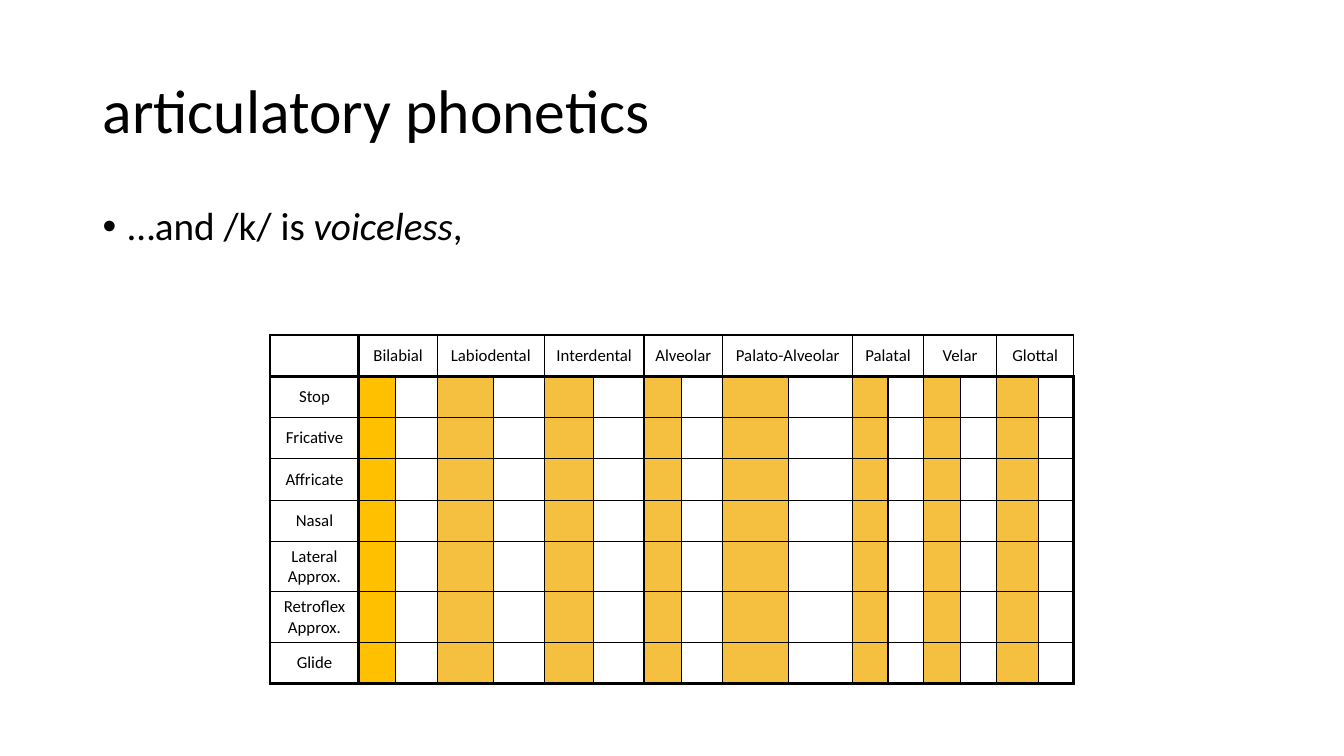
from dataclasses import dataclass

from lxml import etree
from pptx import Presentation
from pptx import util as u
from pptx.dml.color import RGBColor
from pptx.enum import text
from pptx.oxml import ns

BLACK = RGBColor(0x00, 0x00, 0x00)
AMBER = RGBColor(0xFF, 0xC0, 0x00)
SAND = RGBColor(0xF5, 0xC0, 0x40)
FONT = "Calibri"

SLIDE_WIDTH, SLIDE_HEIGHT = u.Inches(13.33), u.Inches(7.5)
MARGIN = 0.069
CONTENT_WIDTH = 0.8625
THIN, HEAVY = u.Pt(1), u.Pt(2.25)
ROW_HEIGHT = u.Inches(0.41)
LABEL_WIDTH = u.Inches(0.88)


@dataclass(frozen=True)
class Place:
    """A place of articulation, with the widths in inches of its two columns."""
    name: str
    voiceless: float
    voiced: float
    fill: RGBColor = SAND


@dataclass(frozen=True)
class Area:
    """A box given as shares of the slide's size."""
    left: float
    top: float
    width: float
    height: float


PLACES = [
    Place("Bilabial", 0.36, 0.42, AMBER),
    Place("Labiodental", 0.56, 0.50),
    Place("Interdental", 0.49, 0.50),
    Place("Alveolar", 0.37, 0.41),
    Place("Palato-Alveolar", 0.65, 0.64),
    Place("Palatal", 0.35, 0.35),
    Place("Velar", 0.37, 0.36),
    Place("Glottal", 0.41, 0.35),
]
MANNERS = ["Stop", "Fricative", "Affricate", "Nasal",
           "Lateral Approx.", "Retroflex Approx.", "Glide"]
TITLE_AREA = Area(MARGIN, 0.053, CONTENT_WIDTH, 0.193)
BODY_AREA = Area(MARGIN, 0.267, CONTENT_WIDTH, 0.635)
TABLE_LEFT, TABLE_TOP = 0.201, 0.443


def add_run(paragraph, words: str, size: float, italic: bool = False) -> None:
    font_format = {"name": FONT, "size": u.Pt(size), "italic": italic, "bold": False}
    run = paragraph.add_run()
    run.text = words
    for attribute, value in font_format.items():
        setattr(run.font, attribute, value)
    run.font.color.rgb = BLACK


def add_paragraph_box(slide, area: Area, anchor):
    """Add a wrapping text box and return its first paragraph."""
    shape = slide.shapes.add_textbox(
        int(area.left * SLIDE_WIDTH), int(area.top * SLIDE_HEIGHT),
        int(area.width * SLIDE_WIDTH), int(area.height * SLIDE_HEIGHT))
    frame_format = {"word_wrap": True, "vertical_anchor": anchor}
    for attribute, value in frame_format.items():
        setattr(shape.text_frame, attribute, value)
    paragraph = shape.text_frame.paragraphs[0]
    paragraph.line_spacing = 0.9
    return paragraph


def add_bullet(paragraph) -> None:
    properties = paragraph._p.get_or_add_pPr()
    indent = u.Inches(0.25)
    properties.set("marL", str(indent))
    properties.set("indent", str(-indent))
    etree.SubElement(properties, ns.qn("a:buFont"), typeface="Arial")
    etree.SubElement(properties, ns.qn("a:buChar"), char="•")


def set_borders(cell, widths: dict[str, int]) -> None:
    properties = cell._tc.get_or_add_tcPr()
    for side, width in widths.items():
        line = etree.SubElement(properties, ns.qn(f"a:ln{side}"), w=str(width))
        fill = etree.SubElement(line, ns.qn("a:solidFill"))
        etree.SubElement(fill, ns.qn("a:srgbClr"), val=str(BLACK))


def write_label(cell, label: str) -> None:
    cell.vertical_anchor = text.MSO_ANCHOR.MIDDLE
    paragraph = cell.text_frame.paragraphs[0]
    paragraph.alignment = text.PP_ALIGN.CENTER
    add_run(paragraph, label, 12)


def add_consonant_table(slide) -> None:
    widths = [LABEL_WIDTH] + [u.Inches(width) for place in PLACES
                              for width in (place.voiceless, place.voiced)]
    row_count, column_count = len(MANNERS) + 1, len(widths)
    table = slide.shapes.add_table(
        row_count, column_count,
        int(TABLE_LEFT * SLIDE_WIDTH), int(TABLE_TOP * SLIDE_HEIGHT),
        sum(widths), row_count * ROW_HEIGHT).table
    for flag in ("first_row", "horz_banding"):
        setattr(table, flag, False)
    for column, width in zip(table.columns, widths):
        column.width = width
    for row in table.rows:
        row.height = ROW_HEIGHT

    def edge(index: int, last: int) -> int:
        """Outer edges and the edge after the headings are heavy."""
        return HEAVY if index in (0, 1, last) else THIN

    for row in range(row_count):
        for column in range(column_count):
            cell = table.cell(row, column)
            set_borders(cell, {
                "L": edge(column, column_count), "R": edge(column + 1, column_count),
                "T": edge(row, row_count), "B": edge(row + 1, row_count)})
            if row and column % 2:
                cell.fill.solid()
                cell.fill.fore_color.rgb = PLACES[column // 2].fill
            else:
                cell.fill.background()

    for index, place in enumerate(PLACES):
        heading = table.cell(0, 2 * index + 1)
        heading.merge(table.cell(0, 2 * index + 2))
        write_label(heading, place.name)
    for row, manner in enumerate(MANNERS, start=1):
        write_label(table.cell(row, 0), manner)


def main() -> None:
    presentation = Presentation()
    presentation.slide_width, presentation.slide_height = SLIDE_WIDTH, SLIDE_HEIGHT
    slide = presentation.slides.add_slide(presentation.slide_layouts[6])

    title = add_paragraph_box(slide, TITLE_AREA, text.MSO_ANCHOR.MIDDLE)
    add_run(title, "articulatory phonetics", 44)

    statement = add_paragraph_box(slide, BODY_AREA, text.MSO_ANCHOR.TOP)
    statement.space_before = u.Pt(10)
    add_bullet(statement)
    for words, italic in (("…and /k/ is ", False), ("voiceless", True), (",", False)):
        add_run(statement, words, 28, italic)

    add_consonant_table(slide)
    presentation.save("out.pptx")


if __name__ == "__main__":
    main()
